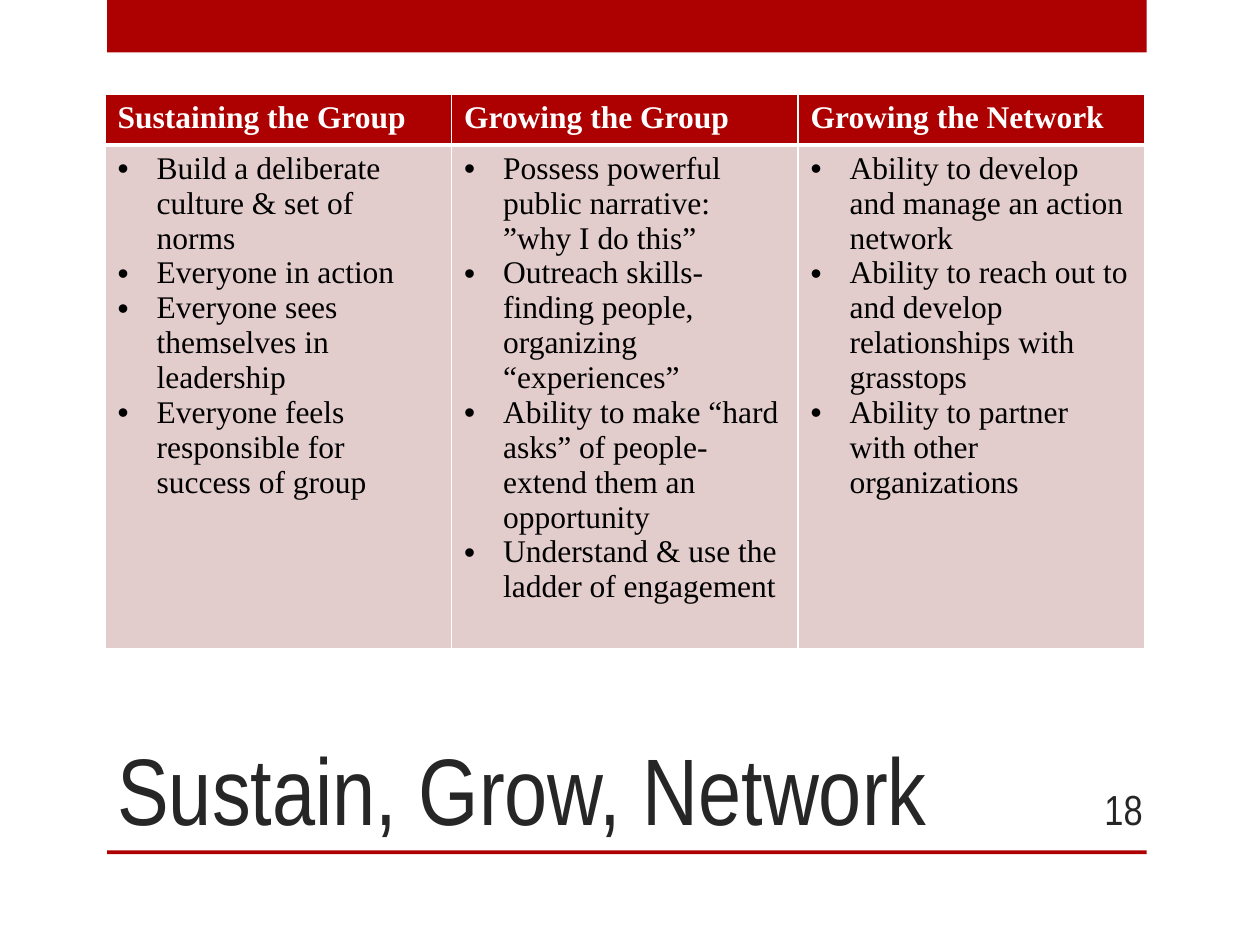
from lxml import etree
from pptx import Presentation
from pptx import util as u
from pptx.dml.color import RGBColor
from pptx.enum import shapes, text
from pptx.oxml.ns import qn

COLUMNS = {
    "Sustaining the Group": [
        "Build a deliberate culture & set of norms",
        "Everyone in action",
        "Everyone sees themselves in leadership",
        "Everyone feels responsible for success of group",
    ],
    "Growing the Group": [
        "Possess powerful public narrative: ”why I do this”",
        "Outreach skills-finding people, organizing “experiences”",
        "Ability to make “hard asks” of people-extend them an opportunity",
        "Understand & use the ladder of engagement",
    ],
    "Growing the Network": [
        "Ability to develop and manage an action network",
        "Ability to reach out to and develop relationships with grasstops",
        "Ability to partner with other organizations",
    ],
}


def color(value):
    return RGBColor.from_string(value)


class Deck:
    RED, PINK, WHITE, BLACK, INK = "AD0101", "E3CCCC", "FFFFFF", "000000", "262626"
    HEAD_FONT, BODY_FONT = "Arial Narrow", "Times New Roman"
    COLS, ROWS = 120, 90

    def __init__(self):
        self.prs = Presentation()
        self.prs.slide_width, self.prs.slide_height = u.Inches(10), u.Inches(7.5)
        self.s = self.prs.slides.add_slide(self.prs.slide_layouts[6])

    def x(self, cols):
        return round(self.prs.slide_width * cols / self.COLS)

    def y(self, rows):
        return round(self.prs.slide_height * rows / self.ROWS)

    def box(self, left, top, width, height):
        return self.x(left), self.y(top), self.x(width), self.y(height)

    def style(self, p, font, size, ink, bold=False):
        for r in p.runs:
            r.font.name, r.font.size, r.font.bold = font, u.Pt(size), bold
            r.font.color.rgb = color(ink)

    def bar(self, *place):
        sp = self.s.shapes.add_shape(shapes.MSO_SHAPE.RECTANGLE, *self.box(*place))
        sp.shadow.inherit = False
        sp.fill.solid()
        sp.fill.fore_color.rgb = color(self.RED)
        sp.line.fill.background()

    def label(self, words, size, anchor, align, *place):
        tf = self.s.shapes.add_textbox(*self.box(*place)).text_frame
        tf.word_wrap = True
        tf.vertical_anchor = anchor
        tf.text = words
        p = tf.paragraphs[0]
        p.alignment = align
        self.style(p, self.HEAD_FONT, size, self.INK)

    def bullet(self, p):
        pPr = p._p.get_or_add_pPr()
        indent = u.Inches(0.31)
        pPr.set("marL", str(indent))
        pPr.set("indent", str(-indent))
        etree.SubElement(pPr, qn("a:buFont")).set("typeface", "Arial")
        etree.SubElement(pPr, qn("a:buChar")).set("char", "•")

    def cell(self, cell, lines, fill, ink, header):
        tcPr = cell._tc.get_or_add_tcPr()
        for side in "LRTB":
            thick = side == ("B" if header else "T")
            ln = etree.SubElement(tcPr, qn(f"a:ln{side}"), w=str(u.Pt(3 if thick else 1)))
            solid = etree.SubElement(ln, qn("a:solidFill"))
            etree.SubElement(solid, qn("a:srgbClr"), val=self.WHITE)
        cell.fill.solid()
        cell.fill.fore_color.rgb = color(fill)
        cell.text_frame.text = "\n".join(lines)
        for p in cell.text_frame.paragraphs:
            self.style(p, self.BODY_FONT, 18, ink, header)
            if not header:
                self.bullet(p)

    def table(self, columns, heights, left, top, width):
        place = self.box(left, top, width, sum(heights))
        table = self.s.shapes.add_table(2, len(columns), *place).table
        for row, height in zip(table.rows, heights):
            row.height = self.y(height)
        for i, (heading, points) in enumerate(columns.items()):
            table.columns[i].width = self.x(width / len(columns))
            self.cell(table.cell(0, i), [heading], self.RED, self.WHITE, True)
            self.cell(table.cell(1, i), points, self.PINK, self.BLACK, False)


def main():
    deck = Deck()
    deck.bar(10.2, 0, 99, 5)
    deck.bar(10.2, 81, 99, 0.36)
    deck.label("Sustain, Grow, Network", 54, text.MSO_ANCHOR.BOTTOM,
               text.PP_ALIGN.LEFT, 10, 60, 89, 21)
    deck.table(COLUMNS, [4.8, 47.7], 10, 9, 99)
    deck.label("18", 24, text.MSO_ANCHOR.MIDDLE, text.PP_ALIGN.RIGHT, 100, 74.64, 10, 4.8)
    deck.prs.save("out.pptx")


if __name__ == "__main__":
    main()
